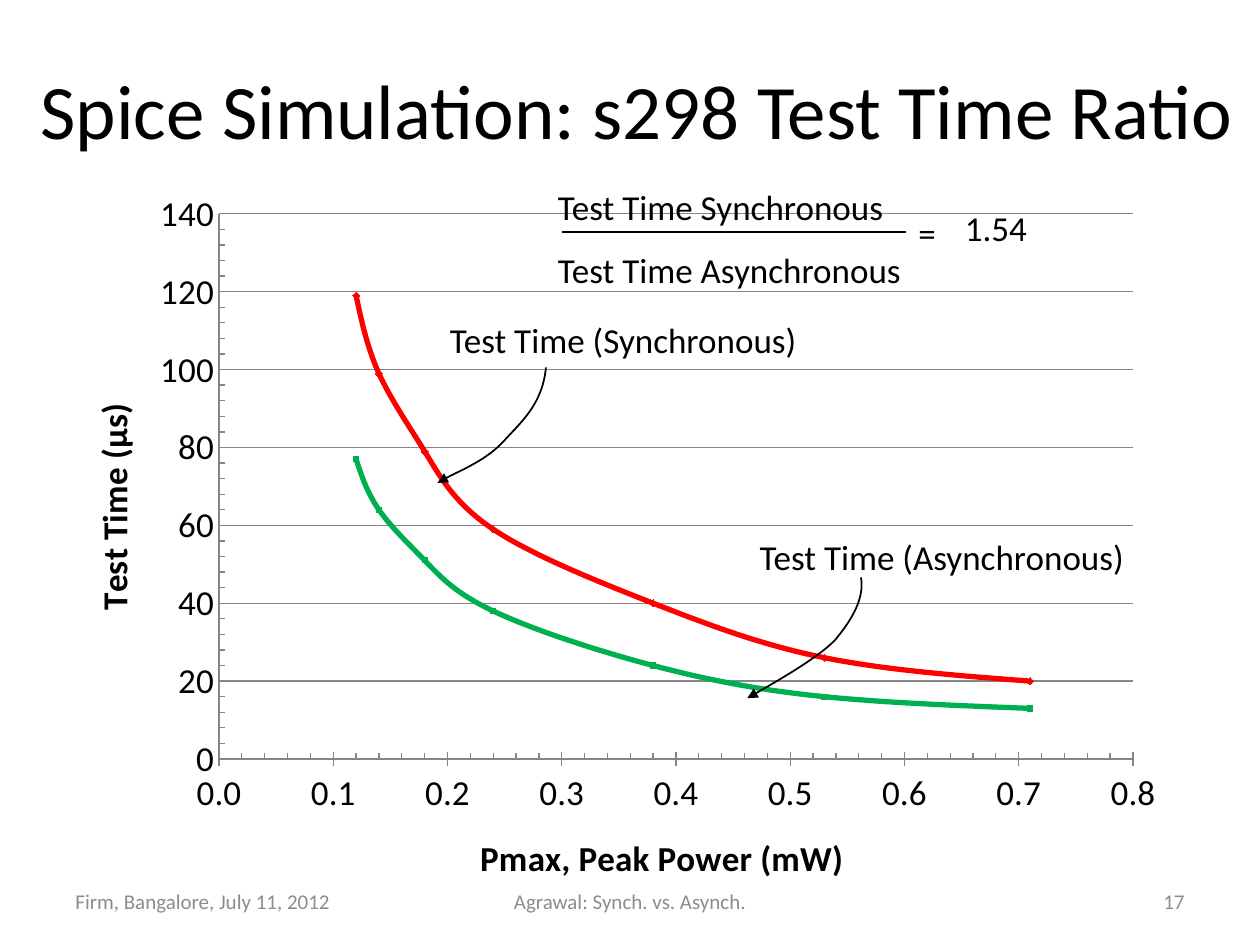
from dataclasses import dataclass

from lxml.etree import SubElement
from pptx import Presentation
from pptx.chart.data import XyChartData
from pptx.dml.color import RGBColor
from pptx.enum.chart import XL_CHART_TYPE as ChartType
from pptx.enum.chart import XL_MARKER_STYLE as Marker
from pptx.enum.chart import XL_TICK_MARK as Tick
from pptx.enum.shapes import MSO_CONNECTOR as Connector
from pptx.enum.text import MSO_ANCHOR as Anchor
from pptx.enum.text import MSO_AUTO_SIZE as AutoSize
from pptx.enum.text import PP_ALIGN as Align
from pptx.oxml import parse_xml
from pptx.oxml.ns import nsdecls, qn
from pptx.util import Pt

FONT = "Calibri"
BLACK = RGBColor(0, 0, 0)
GRAY = RGBColor(0x8C, 0x8C, 0x8C)
GRID = RGBColor(0x86, 0x86, 0x86)
RED = RGBColor(0xFF, 0, 0)
GREEN = RGBColor(0, 0xB0, 0x50)
Point = tuple[float, float]


@dataclass
class Label:
    text: str
    left: float
    top: float
    width: float
    height: float = 31.5
    size: float = 20
    color: RGBColor = BLACK
    align: Align = Align.LEFT
    anchor: Anchor = Anchor.TOP


@dataclass
class Curve:
    name: str
    times: list[int]
    color: RGBColor
    marker: Marker
    marker_size: int


@dataclass
class CurvedArrow:
    start: Point
    segments: list[tuple[Point, Point, Point]]  # two controls and an end


@dataclass
class AxisStyle:
    title: str
    title_position: Point
    maximum: float
    major: float
    minor: float
    number_format: str
    major_tick: Tick


FRACTION = [
    Label("Test Time Synchronous", 311.75, 102.25, 232.5),
    Label("Test Time Asynchronous", 311.75, 138.25, 268.5),
    Label("=", 517.75, 117.25, 26.5),
    Label("1.54", 544.25, 114.25, 71.5),
]
CURVE_LABELS = [
    Label("Test Time (Synchronous)", 250, 178.5, 278.5),
    Label("Test Time (Asynchronous)", 427, 302.5, 229),
]
FOOTERS = [
    Label(text, left, 500.5, width, 28.75, 12, GRAY, align, Anchor.MIDDLE)
    for text, left, width, align in [
        ("Firm, Bangalore, July 11, 2012", 36, 168, Align.LEFT),
        ("Agrawal: Synch. vs. Asynch.", 246, 228, Align.CENTER),
        ("17", 516, 168, Align.RIGHT),
    ]
]
PEAK_POWERS = [0.71, 0.53, 0.38, 0.24, 0.18, 0.14, 0.12]
CURVES = [
    Curve("Synchronous", [20, 26, 40, 59, 79, 99, 119], RED, Marker.DIAMOND, 4),
    Curve("Asynchronous", [13, 16, 24, 38, 51, 64, 77], GREEN, Marker.SQUARE, 3),
]
POWER_AXIS = AxisStyle("Pmax, Peak Power (mW)", (0.37, 0.89), 0.8, 0.1, 0.02,
                       "#,##0.0", Tick.CROSS)
TIME_AXIS = AxisStyle("Test Time (µs)", (0.02, 0.3), 140, 20, 4, "0", Tick.NONE)
ARROWS = [
    CurvedArrow((312, 210), [((310, 231), (298, 241), (288, 252)),
                             ((278, 263), (256, 272), (250, 276))]),
    CurvedArrow((492, 330), [((494, 342), (487, 354), (477, 366)),
                             ((466, 377), (427, 399), (427, 399))]),
]


def add_label(shapes, label: Label) -> None:
    box = shapes.add_textbox(Pt(label.left), Pt(label.top), Pt(label.width), Pt(label.height))
    frame = box.text_frame
    frame.word_wrap = True
    frame.vertical_anchor = label.anchor
    paragraph = frame.paragraphs[0]
    paragraph.text = label.text
    paragraph.alignment = label.align
    set_font(paragraph.font, label.size, label.color)


def set_font(font, size: float, color: RGBColor = BLACK, bold: bool = False) -> None:
    font.name, font.size, font.bold = FONT, Pt(size), bold
    font.color.rgb = color


def set_layout(element, index: int, **values) -> None:
    """Place a chart part by fractions of the chart area."""
    for old in element.findall(qn("c:layout")):
        element.remove(old)
    layout = parse_xml(f"<c:layout {nsdecls('c')}><c:manualLayout/></c:layout>")
    for tag, value in values.items():
        SubElement(layout[0], qn(f"c:{tag}"), val=str(value))
    element.insert(index, layout)


def style_axis(axis, style: AxisStyle) -> None:
    axis.minimum_scale, axis.maximum_scale = 0, style.maximum
    axis.major_unit, axis.minor_unit = style.major, style.minor
    axis.major_tick_mark, axis.minor_tick_mark = style.major_tick, Tick.INSIDE
    axis.tick_labels.number_format = style.number_format
    axis.tick_labels.number_format_is_linked = False
    set_font(axis.tick_labels.font, 20)
    axis.format.line.color.rgb = GRID
    title = axis.axis_title
    paragraph = title.text_frame.paragraphs[0]
    paragraph.text = style.title
    set_font(paragraph.font, 20, bold=True)
    x, y = style.title_position
    set_layout(title._element, 1, xMode="edge", yMode="edge", x=x, y=y)


def add_time_chart(slide) -> None:
    data = XyChartData()
    for curve in CURVES:
        series = data.add_series(curve.name)
        for power, time in zip(PEAK_POWERS, curve.times):
            series.add_data_point(power, time)
    chart = slide.shapes.add_chart(ChartType.XY_SCATTER_SMOOTH, Pt(34.5), Pt(102.25),
                                   Pt(638.5), Pt(416), data).chart
    chart.has_title = chart.has_legend = False
    set_font(chart.font, 10)
    style_axis(chart.category_axis, POWER_AXIS)
    style_axis(chart.value_axis, TIME_AXIS)
    chart.category_axis.has_major_gridlines = False
    chart.value_axis.has_major_gridlines = True
    chart.value_axis.major_gridlines.format.line.color.rgb = GRID
    plot = chart.plots[0]
    plot.vary_by_categories = False
    for series, curve in zip(plot.series, CURVES):
        # Scatter series have no public smooth property
        series._element.get_or_add_smooth().val = True
        series.format.line.color.rgb = curve.color
        series.format.line.width = Pt(3)
        series.marker.style, series.marker.size = curve.marker, curve.marker_size
        for part in (series.marker.format.fill, series.marker.format.line.fill):
            part.solid()
            part.fore_color.rgb = curve.color
    plot_area = chart._chartSpace.find(f".//{qn('c:plotArea')}")
    set_layout(plot_area, 0, layoutTarget="inner", xMode="edge", yMode="edge",
               x=0.142, y=0.048, w=0.818, h=0.749)


def add_curved_arrow(slide, arrow: CurvedArrow) -> None:
    builder = slide.shapes.build_freeform(Pt(arrow.start[0]), Pt(arrow.start[1]))
    builder.add_line_segments([(Pt(x), Pt(y)) for *_, (x, y) in arrow.segments], close=False)
    shape = builder.convert_to_shape()
    shape.shadow.inherit = False
    shape.fill.background()
    shape.line.color.rgb = BLACK
    shape.line.width = Pt(1)
    SubElement(shape.line._get_or_add_ln(), qn("a:tailEnd"), type="triangle")
    # Turn each straight segment into a cubic curve
    straight = list(shape._element.iter(qn("a:lnTo")))
    for line, (*controls, _) in zip(straight, arrow.segments):
        bezier = parse_xml(f"<a:cubicBezTo {nsdecls('a')}/>")
        for x, y in controls:
            SubElement(bezier, qn("a:pt"), x=str(Pt(x) - shape.left), y=str(Pt(y) - shape.top))
        line.getparent().replace(line, bezier)
        bezier.append(line[0])


def add_fraction(slide) -> None:
    shapes = slide.shapes.add_group_shape().shapes
    for label in FRACTION:
        add_label(shapes, label)
    bar = shapes.add_connector(Connector.STRAIGHT, Pt(321), Pt(132.5), Pt(517.75), Pt(132.5))
    bar.line.color.rgb = BLACK
    bar.line.width = Pt(1.5)
    SubElement(bar._element.spPr, qn("a:effectLst"))


def set_title(slide, text: str) -> None:
    title = slide.shapes.title
    title.left, title.top, title.width, title.height = Pt(16), Pt(31.75), Pt(704), Pt(60.5)
    frame = title.text_frame
    frame.text = text
    frame.word_wrap = False
    frame.auto_size = AutoSize.NONE
    frame.vertical_anchor = Anchor.MIDDLE
    frame.paragraphs[0].alignment = Align.LEFT
    set_font(frame.paragraphs[0].font, 44)


def main() -> None:
    presentation = Presentation()
    presentation.slide_width, presentation.slide_height = Pt(720), Pt(540)
    slide = presentation.slides.add_slide(presentation.slide_layouts[5])
    set_title(slide, "Spice Simulation: s298 Test Time Ratio")
    add_time_chart(slide)
    add_fraction(slide)
    for label in CURVE_LABELS + FOOTERS:
        add_label(slide.shapes, label)
    for arrow in ARROWS:
        add_curved_arrow(slide, arrow)
    presentation.save("out.pptx")


if __name__ == "__main__":
    main()
